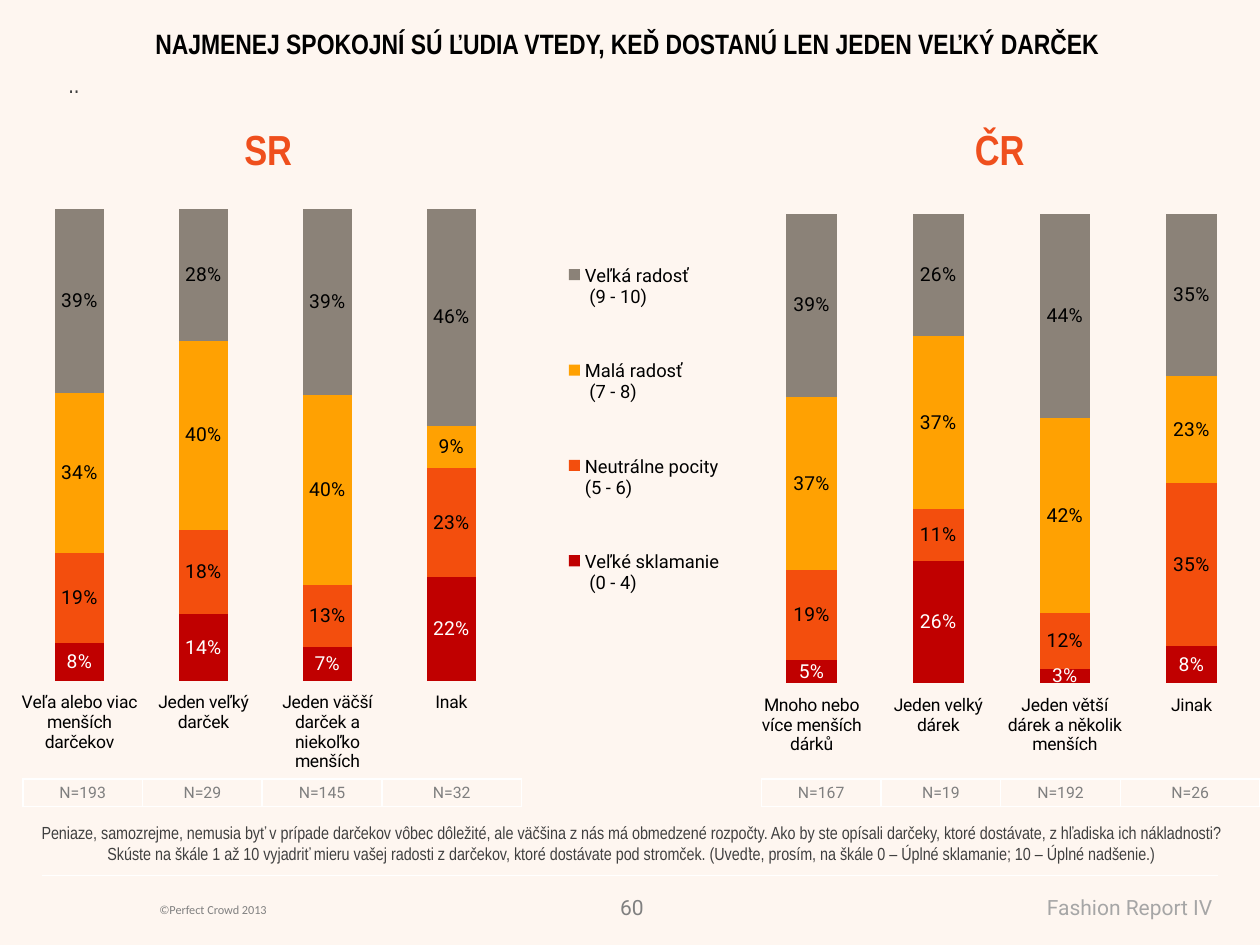
from dataclasses import dataclass
from typing import NamedTuple

from lxml.etree import SubElement
from pptx import Presentation
from pptx.chart.data import CategoryChartData
from pptx.dml.color import RGBColor
from pptx.enum.chart import XL_CHART_TYPE, XL_LABEL_POSITION, XL_LEGEND_POSITION, XL_TICK_LABEL_POSITION
from pptx.enum.shapes import MSO_CONNECTOR
from pptx.enum.text import MSO_ANCHOR, PP_ALIGN
from pptx.oxml import parse_xml
from pptx.oxml.ns import nsdecls, qn
from pptx.util import Pt


@dataclass(frozen=True)
class Theme:
    """Colours, fonts and type sizes of the slide."""
    back: str = "FEF6F0"
    white: str = "FFFFFF"
    black: str = "000000"
    dark: str = "404040"
    grey: str = "808080"
    count: str = "7F7F7F"
    pale: str = "A6A6A6"
    accent: str = "EF4F1D"
    bands: tuple = ("C00000", "F34E0D", "FFA102", "8B8278")
    narrow: str = "Arial Narrow"
    body: str = "Roboto"
    foot: str = "Calibri"
    tiny: float = 7
    small: float = 9
    note: float = 10
    key: float = 10.5
    label: float = 11
    page: float = 12
    dots: float = 14
    title: float = 16
    head: float = 24


THEME = Theme()


class Box(NamedTuple):
    """Left, top, width and height in points."""
    left: float
    top: float
    width: float
    height: float

    def place(self) -> tuple:
        """Return the box as lengths."""
        return tuple(Pt(v) for v in self)


class Style(NamedTuple):
    """Look of a piece of text."""
    size: float
    face: str
    tint: str
    bold: bool = False
    align: PP_ALIGN = PP_ALIGN.LEFT


class Label(NamedTuple):
    """Text in a box."""
    text: str
    box: Box
    style: Style
    wrap: bool = True


class Panel(NamedTuple):
    """Stacked chart with its heading and sample sizes."""
    head: Label
    box: Box
    plot: tuple
    groups: tuple
    names: tuple
    rows: tuple
    counts: tuple
    left: float
    key: tuple = ()


HEAD = Style(THEME.head, THEME.narrow, THEME.accent, True)
COUNT = Style(THEME.small, THEME.body, THEME.count, align=PP_ALIGN.CENTER)
TITLE = Label("NAJMENEJ SPOKOJNÍ SÚ ĽUDIA VTEDY, KEĎ DOSTANÚ LEN JEDEN VEĽKÝ DARČEK",
              Box(40, 11.5, 637, 27),
              Style(THEME.title, THEME.narrow, THEME.black, True, PP_ALIGN.CENTER))
LABELS = (
    Label("©Perfect Crowd 2013", Box(84, 512, 210, 16), Style(THEME.tiny, THEME.foot, THEME.grey)),
    Label("Fashion Report IV", Box(433, 507.6, 267, 21.6),
          Style(THEME.page, THEME.body, THEME.pale, align=PP_ALIGN.RIGHT)),
    Label("60", Box(345, 507.6, 30, 21.6),
          Style(THEME.page, THEME.body, THEME.grey, align=PP_ALIGN.RIGHT)),
    Label("Peniaze, samozrejme, nemusia byť v prípade darčekov vôbec dôležité, ale väčšina z nás má "
          "obmedzené rozpočty. Ako by ste opísali darčeky, ktoré dostávate, z hľadiska ich nákladnosti?\n"
          "Skúste na škále 1 až 10 vyjadriť mieru vašej radosti z darčekov, ktoré dostávate pod stromček. "
          "(Uveďte, prosím, na škále 0 – Úplné sklamanie; 10 – Úplné nadšenie.)",
          Box(13, 466, 695, 44),
          Style(THEME.note, THEME.narrow, THEME.dark, align=PP_ALIGN.CENTER)),
    Label("..", Box(32, 36, 672, 52), Style(THEME.dots, THEME.narrow, THEME.dark)),
)
PANELS = (
    Panel(Label("ČR", Box(550, 67, 43, 36), HEAD, False),
          Box(417, 67, 353, 394.5), (0.03, 0.14, 0.82, 0.68),
          ("Mnoho nebo více menších dárků", "Jeden velký dárek",
           "Jeden větší dárek a několik menších", "Jinak"),
          ("Series 1", "Series 2", "Series 3", "Series 4"),
          ((5, 26, 3, 8), (19, 11, 12, 35), (37, 37, 42, 23), (39, 26, 44, 35)),
          (167, 19, 192, 26), 435),
    Panel(Label("SR", Box(132.5, 67, 43, 36), HEAD, False),
          Box(10, 98.6, 659, 376.6), (0, 0.055, 0.43, 0.716),
          ("Veľa alebo viac menších darčekov", "Jeden veľký darček",
           "Jeden väčší darček a niekoľko menších", "Inak"),
          ("Veľké sklamanie\n (0 - 4)", "Neutrálne pocity \n(5 - 6)",
           "Malá radosť\n (7 - 8)", "Veľká radosť\n (9 - 10)"),
          ((8, 14, 7, 22), (19, 18, 13, 23), (34, 40, 40, 9), (39, 28, 39, 46)),
          (193, 29, 145, 32), 13, (0.46, 0.06, 0.17, 0.66)),
)


def paint(font, style: Style) -> None:
    """Apply a style to a font."""
    font.size, font.name, font.bold = Pt(style.size), style.face, style.bold
    font.color.rgb = RGBColor.from_string(style.tint)


def write(frame, text: str, style: Style) -> None:
    """Fill a text frame and format its runs."""
    frame.text = text
    for para in frame.paragraphs:
        para.alignment = style.align
        for run in para.runs:
            paint(run.font, style)


def draw_label(slide, label: Label) -> None:
    """Add a text box."""
    frame = slide.shapes.add_textbox(*label.box.place()).text_frame
    frame.word_wrap = label.wrap
    write(frame, label.text, label.style)


def draw_title(slide) -> None:
    """Move and format the title."""
    shape = slide.shapes.title
    shape.left, shape.top, shape.width, shape.height = TITLE.box.place()
    shape.text_frame.vertical_anchor = MSO_ANCHOR.TOP
    write(shape.text_frame, TITLE.text, TITLE.style)


def draw_rule(slide) -> None:
    """Add the footer line."""
    line = slide.shapes.add_connector(MSO_CONNECTOR.STRAIGHT, Pt(24), Pt(500.4), Pt(696), Pt(500.4))
    line.line.width = Pt(0.75)
    line.line.color.rgb = RGBColor.from_string(THEME.white)
    SubElement(line._element.spPr, qn("a:effectLst"))


def draw_counts(slide, panel: Panel) -> None:
    """Add the row of sample sizes."""
    table = slide.shapes.add_table(1, 4, *Box(panel.left, 445, 285, 16).place()).table
    table.first_row = table.horz_banding = False
    for col, wide in zip(table.columns, (68.4, 68.4, 68.4, 79.8)):
        col.width = Pt(wide)
    for cell, count in zip(table.rows[0].cells, panel.counts):
        cell.fill.background()
        cell.vertical_anchor = MSO_ANCHOR.MIDDLE
        cell.margin_left = cell.margin_right = cell.margin_top = cell.margin_bottom = 0
        write(cell.text_frame, f"N={count}", COUNT)


def frame_part(spots: tuple, inner: bool = False):
    """Return a manual chart layout."""
    target = '<c:layoutTarget val="inner"/>' if inner else ""
    modes = "".join(f'<c:{n}Mode val="edge"/>' for n in "xy")
    sizes = "".join(f'<c:{n} val="{v}"/>' for n, v in zip("xywh", spots))
    return parse_xml(f'<c:layout {nsdecls("c")}><c:manualLayout>{target}{modes}{sizes}'
                     '</c:manualLayout></c:layout>')


def draw_chart(slide, panel: Panel) -> None:
    """Add a stacked chart."""
    data = CategoryChartData(number_format='#,##0"%"')
    data.categories = panel.groups
    for name, row in zip(panel.names, panel.rows):
        data.add_series(name, row)
    chart = slide.shapes.add_chart(XL_CHART_TYPE.COLUMN_STACKED_100, *panel.box.place(), data).chart
    base = Style(THEME.page, THEME.body, THEME.black)
    paint(chart.font, base)
    chart._chartSpace.find(qn("c:txPr")).addprevious(
        parse_xml(f'<c:spPr {nsdecls("c", "a")}><a:noFill/><a:ln><a:noFill/></a:ln></c:spPr>'))
    chart.has_title = False
    chart.has_legend = bool(panel.key)
    if panel.key:
        key = chart.legend
        key.position, key.include_in_layout = XL_LEGEND_POSITION.RIGHT, False
        paint(key.font, base._replace(size=THEME.key))
        key._element.find(qn("c:legendPos")).addnext(frame_part(panel.key))
    area = chart._chartSpace.chart.plotArea
    for old in area.findall(qn("c:layout")):
        area.remove(old)
    area.insert(0, frame_part(panel.plot, True))
    chart.value_axis.visible = chart.value_axis.has_major_gridlines = False
    axis = chart.category_axis
    axis.tick_label_position = XL_TICK_LABEL_POSITION.LOW
    axis.format.line.fill.background()
    paint(axis.tick_labels.font, base._replace(size=THEME.note))
    plot = chart.plots[0]
    plot.gap_width, plot.overlap, plot.vary_by_categories = 150, 100, False
    for rank, (band, tint) in enumerate(zip(plot.series, THEME.bands)):
        band.format.fill.solid()
        band.format.fill.fore_color.rgb = RGBColor.from_string(tint)
        tags = band.data_labels
        tags.show_value, tags.position = True, XL_LABEL_POSITION.CENTER
        tags.number_format, tags.number_format_is_linked = '#,##0"%"', False
        paint(tags.font, base._replace(size=THEME.label, tint=THEME.black if rank else THEME.white))


def main() -> None:
    """Build and save the slide."""
    deck = Presentation()
    deck.slide_width, deck.slide_height = Pt(720), Pt(540)
    slide = deck.slides.add_slide(deck.slide_layouts[5])
    slide.background.fill.solid()
    slide.background.fill.fore_color.rgb = RGBColor.from_string(THEME.back)
    draw_title(slide)
    draw_rule(slide)
    for label in LABELS:
        draw_label(slide, label)
    for panel in PANELS:
        draw_counts(slide, panel)
        draw_label(slide, panel.head)
        draw_chart(slide, panel)
    deck.save("out.pptx")


if __name__ == "__main__":
    main()
